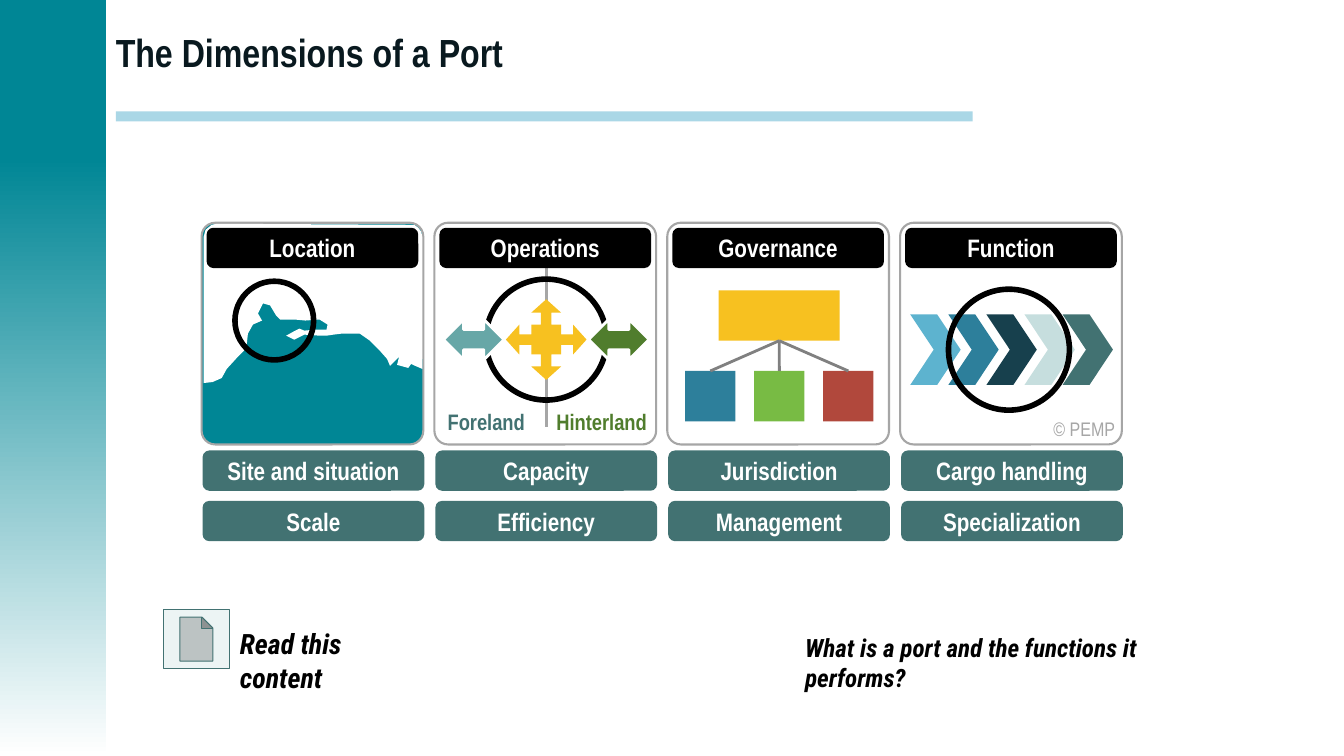
from lxml.etree import SubElement
from pptx import Presentation
from pptx.dml.color import RGBColor
from pptx.enum.shapes import MSO_CONNECTOR, MSO_SHAPE
from pptx.enum.text import MSO_ANCHOR, MSO_AUTO_SIZE, PP_ALIGN
from pptx.oxml.ns import qn
from pptx.util import Pt

COLORS = {
    "teal": "008695", "sky": "AAD7E6", "ink": "09191F", "black": "000000",
    "white": "FFFFFF", "pine": "427272", "mist": "ECF4F4", "silver": "A6A6A6",
    "gray": "808080", "sea": "67A7A7", "gold": "F7C120", "forest": "507D2D",
    "blue": "2D7F9B", "lime": "78BB44", "brick": "B1483C", "azure": "5DB3CF",
    "navy": "17404D", "pale": "C6DEDE",
}
NARROW = "Arial Narrow"
CONDENSED = "Roboto Condensed"

CARD_LEFT, CARD_TOP, CARD_SIZE, CARD_PITCH = 144, 159.1, 158.4, 166.32
DIMENSIONS = {
    "Location": ("Site and situation", "Scale"),
    "Operations": ("Capacity", "Efficiency"),
    "Governance": ("Jurisdiction", "Management"),
    "Function": ("Cargo handling", "Specialization"),
}
SEA_OUTLINE = [
    (221, 222), (407, 223), (411, 223), (415, 226), (418, 230), (419, 235),
    (419, 366), (412, 363), (408, 361), (405, 365), (394, 362), (396, 354),
    (387, 363), (384, 356), (376, 347), (370, 341), (367, 338), (357, 331),
    (351, 331), (339, 331), (331, 332), (324, 333), (317, 333), (302, 332),
    (292, 337), (284, 333), (293, 328), (297, 326), (302, 328), (313, 327),
    (324, 327), (325, 322), (317, 317), (303, 318), (292, 317), (278, 317),
    (274, 313), (268, 303), (261, 301), (256, 311), (260, 318), (251, 322),
    (246, 331), (245, 340), (245, 345), (235, 355), (225, 366), (220, 375),
    (211, 379), (202, 380), (202, 235), (204, 228), (210, 223), (215, 222),
]


def rgb(name):
    return RGBColor.from_string(COLORS[name])


def write(frame, text, size=18, color="black", font=NARROW, bold=True,
          italic=False, align=PP_ALIGN.LEFT, anchor=MSO_ANCHOR.TOP):
    frame.vertical_anchor = anchor
    paragraph = frame.paragraphs[0]
    paragraph.alignment = align
    run = paragraph.add_run()
    run.text = text
    run.font.size = Pt(size)
    run.font.name = font
    run.font.bold = bold
    run.font.italic = italic
    run.font.color.rgb = rgb(color)


class PortSlide:
    def __init__(self, deck):
        self.slide = deck.slides.add_slide(deck.slide_layouts[6])
        self.shapes = self.slide.shapes

    def paint(self, shape, fill=None, line=None, weight=1):
        shape.shadow.inherit = False
        if fill:
            shape.fill.solid()
            shape.fill.fore_color.rgb = rgb(fill)
        else:
            shape.fill.background()
        if line:
            shape.line.color.rgb = rgb(line)
            shape.line.width = Pt(weight)
        else:
            shape.line.fill.background()
        return shape

    def shape(self, kind, left, top, width, height, adjust=(), **look):
        shape = self.shapes.add_shape(kind, Pt(left), Pt(top), Pt(width), Pt(height))
        for index, value in enumerate(adjust):
            shape.adjustments[index] = value
        return self.paint(shape, **look)

    def rect(self, *box, **look):
        return self.shape(MSO_SHAPE.RECTANGLE, *box, **look)

    def ring(self, left, top, size):
        return self.shape(MSO_SHAPE.OVAL, left, top, size, size, line="black", weight=4)

    def fade(self, left, top, width, height, start, end):
        band = self.rect(left, top, width, height)
        band.fill.gradient()
        band.fill.gradient_angle = 270
        for stop, color in zip(band.fill.gradient_stops, (start, end)):
            stop.color.rgb = rgb(color)

    def label(self, text, left, top, width, height, inset=(7.2, 3.6),
              wrap=True, grow=True, **style):
        frame = self.shapes.add_textbox(Pt(left), Pt(top), Pt(width), Pt(height)).text_frame
        frame.word_wrap = wrap
        frame.auto_size = MSO_AUTO_SIZE.SHAPE_TO_FIT_TEXT if grow else MSO_AUTO_SIZE.NONE
        frame.margin_left = frame.margin_right = Pt(inset[0])
        frame.margin_top = frame.margin_bottom = Pt(inset[1])
        write(frame, text, **style)

    def tag(self, text, left, top, width, fill):
        tag = self.shape(MSO_SHAPE.ROUNDED_RECTANGLE, left, top, width, 28.8, fill=fill)
        write(tag.text_frame, text, color="white", align=PP_ALIGN.CENTER,
              anchor=MSO_ANCHOR.MIDDLE)

    def line(self, x1, y1, x2, y2, color, weight=2):
        line = self.shapes.add_connector(
            MSO_CONNECTOR.STRAIGHT, Pt(x1), Pt(y1), Pt(x2), Pt(y2))
        line.line.color.rgb = rgb(color)
        line.line.width = Pt(weight)
        SubElement(line._element.spPr, qn("a:effectLst"))
        return line

    def branch(self, parent, child, color):
        line = self.line(0, 0, 0, 0, color)
        line.begin_connect(parent, 2)
        line.end_connect(child, 0)

    def outline(self, points, fill):
        builder = self.shapes.build_freeform(*points[0], scale=Pt(0.72))
        builder.add_line_segments(points[1:], close=True)
        self.paint(builder.convert_to_shape(), fill=fill)


def draw_frame(page):
    page.rect(0, 0, 75.6, 113, fill="teal")
    page.fade(0, 113, 75.6, 427, "teal", "white")
    page.rect(82.8, 79.5, 612, 7.2, fill="sky")
    page.label("The Dimensions of a Port", 75.6, 0.7, 862.5, 72, grow=False,
               size=28, color="ink", anchor=MSO_ANCHOR.MIDDLE)
    page.label("What is a port and the functions it performs?", 568, 447.8, 314, 28.8,
               font=CONDENSED, italic=True)
    page.shape(MSO_SHAPE.ACTION_BUTTON_DOCUMENT, 116.6, 435.6, 47.5, 41.8,
               fill="mist", line="pine", weight=0.75)
    page.label("Read this content", 164.2, 444.2, 134, 31.7,
               size=20, font=CONDENSED, italic=True)


def draw_operations(page):
    page.ring(347, 199.4, 86.4)
    for left, color in ((316.8, "sea"), (420.5, "forest")):
        page.shape(MSO_SHAPE.LEFT_RIGHT_ARROW, left, 228.2, 43.2, 28.8,
                   fill=color, line="white", weight=2)
    page.shape(MSO_SHAPE.QUAD_ARROW_CALLOUT, 361.4, 213.8, 57.6, 57.6,
               adjust=(0.129, 0.185, 0.166, 0.369), fill="gold")
    page.label("Foreland", 316.1, 291.6, 63.4, 19.4, inset=(3.6, 0), wrap=False,
               size=16, color="pine")
    page.label("Hinterland", 393.8, 291.6, 72.7, 19.4, inset=(3.6, 0), wrap=False,
               size=16, color="forest")


def draw_governance(page):
    authority = page.rect(513.4, 207.4, 86.4, 36, fill="gold")
    for index, color in enumerate(("blue", "lime", "brick")):
        body = page.rect(489.4 + index * 49.3, 265, 36, 36, fill=color)
        page.branch(authority, body, "gray")


def draw_function(page):
    for index, color in enumerate(("azure", "blue", "navy", "pale", "pine")):
        page.shape(MSO_SHAPE.CHEVRON, 650.2 + index * 27.2, 224.6, 36, 50.4,
                   adjust=(0.466,), fill=color)
    page.ring(677.5, 206.6, 86.4)


def draw_location(page):
    page.outline(SEA_OUTLINE, "white")
    page.ring(167.8, 200.9, 56.2)


def main():
    deck = Presentation()
    deck.slide_width, deck.slide_height = Pt(960), Pt(540)
    page = PortSlide(deck)
    draw_frame(page)
    page.line(390.2, 175.7, 390.2, 305.3, "silver")
    lefts = [CARD_LEFT + index * CARD_PITCH for index in range(len(DIMENSIONS))]
    for left, name in zip(lefts, DIMENSIONS):
        page.shape(MSO_SHAPE.ROUNDED_RECTANGLE, left, CARD_TOP, CARD_SIZE, CARD_SIZE,
                   adjust=(0.062,), fill="teal" if name == "Location" else None,
                   line="silver", weight=1.5)
    draw_operations(page)
    draw_governance(page)
    draw_function(page)
    draw_location(page)
    for left, (name, aspects) in zip(lefts, DIMENSIONS.items()):
        page.tag(name, left + 3.6, CARD_TOP + 3.6, CARD_SIZE - 7.2, "black")
        for row, aspect in enumerate(aspects):
            page.tag(aspect, left + 0.7, 321.8 + row * 36, CARD_SIZE, "pine")
    page.label("© PEMP", 752.4, 298.1, 48.2, 17.3, inset=(0, 0),
               size=14, color="silver", bold=False)
    deck.save("out.pptx")


if __name__ == "__main__":
    main()
